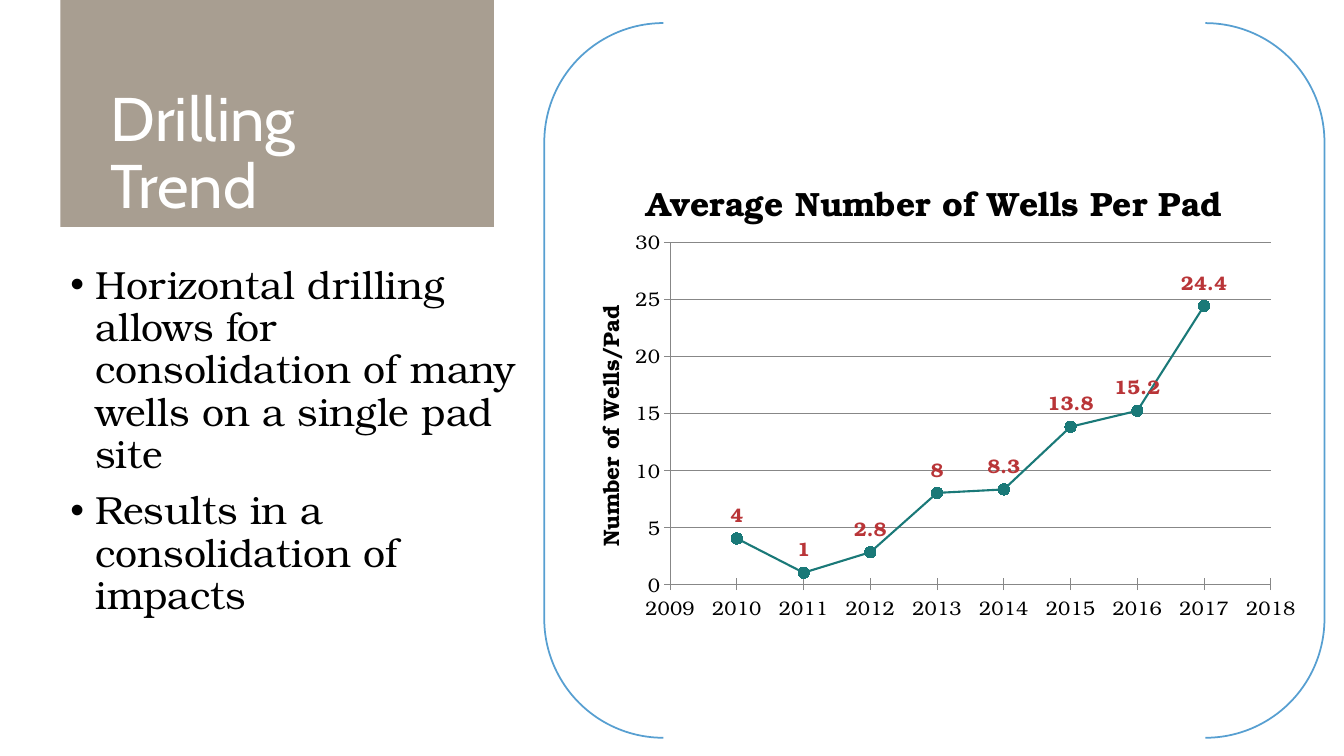
"""Build the Drilling Trend slide with its wells-per-pad chart."""
import lxml.etree
import pptx
import pptx.chart.data
import pptx.dml.color
import pptx.enum.chart
import pptx.enum.shapes
import pptx.enum.text
import pptx.oxml.ns
import pptx.util

Pt = pptx.util.Pt
qn = pptx.oxml.ns.qn

HEADING = "Drilling\vTrend"
BULLETS = [
    "Horizontal drilling allows for consolidation of many wells on a single pad site",
    "Results in a consolidation of impacts",
]
CHART_TITLE = "Average Number of Wells Per Pad"
AXIS_TITLE = "Number of Wells/Pad"
WELLS_PER_PAD = {2010: 4, 2011: 1, 2012: 2.8, 2013: 8,
                 2014: 8.3, 2015: 13.8, 2016: 15.2, 2017: 24.4}
HEADING_FONT, BODY_FONT = "Cabin", "TeX Gyre Bonum"
BLACK, WHITE, TAUPE, BLUE = "000000", "FFFFFF", "A89E91", "579FD1"
TEAL, RED, GREY = "1A7978", "B93538", "878787"


def color(hex_code):
    return pptx.dml.color.RGBColor.from_string(hex_code)


def format_font(font, size, hex_code=BLACK, face=BODY_FONT, bold=False):
    font.name, font.size, font.bold = face, Pt(size), bold
    font.color.rgb = color(hex_code)


def write(paragraph, text, spacing=None, before=0, bullet=None, **font_format):
    paragraph.text = text
    paragraph.line_spacing = spacing
    paragraph.space_before = Pt(before)
    if bullet:
        properties = paragraph._p.get_or_add_pPr()
        properties.set("marL", str(Pt(18)))
        properties.set("indent", str(-Pt(18)))
        lxml.etree.SubElement(properties, qn("a:buFont"), typeface="Arial")
        lxml.etree.SubElement(properties, qn("a:buChar"), char=bullet)
    for run in paragraph.runs:
        format_font(run.font, **font_format)


def place(element, **fractions):
    layout = element.find(qn("c:layout"))
    manual = lxml.etree.SubElement(layout, qn("c:manualLayout"))
    if "w" in fractions:
        lxml.etree.SubElement(manual, qn("c:layoutTarget"), val="inner")
    for side in "xy":
        lxml.etree.SubElement(manual, qn(f"c:{side}Mode"), val="edge")
    for side, fraction in fractions.items():
        lxml.etree.SubElement(manual, qn(f"c:{side}"), val=str(fraction))


def add_heading(slide):
    heading = slide.shapes.title
    heading.left, heading.top, heading.width, heading.height = Pt(43.2), Pt(0), Pt(309.6), Pt(162)
    heading.fill.solid()
    heading.fill.fore_color.rgb = color(TAUPE)
    frame = heading.text_frame
    frame.word_wrap = True
    frame.auto_size = pptx.enum.text.MSO_AUTO_SIZE.NONE
    frame.vertical_anchor = pptx.enum.text.MSO_ANCHOR.BOTTOM
    frame.margin_left = frame.margin_right = Pt(36)
    frame.margin_top = frame.margin_bottom = Pt(3.6)
    write(frame.paragraphs[0], HEADING, spacing=0.9, size=44, hex_code=WHITE, face=HEADING_FONT)
    frame.paragraphs[0].alignment = pptx.enum.text.PP_ALIGN.LEFT


def add_bullets(slide):
    frame = slide.shapes.add_textbox(Pt(43.2), Pt(171.4), Pt(336.2), Pt(288)).text_frame
    frame.word_wrap = True
    frame.vertical_anchor = pptx.enum.text.MSO_ANCHOR.MIDDLE
    for index, bullet_text in enumerate(BULLETS):
        paragraph = frame.add_paragraph() if index else frame.paragraphs[0]
        write(paragraph, bullet_text, spacing=0.9, before=10 if index else 0, bullet="•", size=28)


def add_brackets(slide):
    brackets = slide.shapes.add_shape(pptx.enum.shapes.MSO_SHAPE.DOUBLE_BRACKET,
                                      Pt(388.8), Pt(16.5), Pt(557.3), Pt(510.5))
    brackets.shadow.inherit = False
    brackets.fill.background()
    brackets.line.color.rgb = color(BLUE)
    brackets.line.width = Pt(1.25)


def format_axis(axis, low, high, step):
    axis.minimum_scale, axis.maximum_scale, axis.major_unit = low, high, step
    axis.major_tick_mark = pptx.enum.chart.XL_TICK_MARK.CROSS
    axis.minor_tick_mark = pptx.enum.chart.XL_TICK_MARK.NONE
    axis.format.line.color.rgb = color(GREY)
    axis.tick_labels.number_format = "General"
    axis.tick_labels.number_format_is_linked = False
    format_font(axis.tick_labels.font, size=14)


def add_trend_chart(slide):
    trend = pptx.chart.data.XyChartData()
    wells = trend.add_series("Series 1")
    for year, count in WELLS_PER_PAD.items():
        wells.add_data_point(year, count)
    chart = slide.shapes.add_chart(pptx.enum.chart.XL_CHART_TYPE.XY_SCATTER_LINES,
                                   Pt(398.2), Pt(95), Pt(536.4), Pt(354.2), trend).chart
    chart.has_legend = False
    format_font(chart.font, size=10)
    chart.has_title = True
    write(chart.chart_title.text_frame.paragraphs[0], CHART_TITLE, size=24, bold=True)
    years, counts = chart.category_axis, chart.value_axis
    format_axis(years, 2009, 2018, 1)
    format_axis(counts, 0, 30, 5)
    years.has_major_gridlines = False
    counts.has_major_gridlines = True
    counts.major_gridlines.format.line.color.rgb = color(GREY)
    counts.has_title = True
    write(counts.axis_title.text_frame.paragraphs[0], AXIS_TITLE, size=16, bold=True)
    plot_area = chart._chartSpace.chart.plotArea
    if plot_area.find(qn("c:layout")) is None:
        plot_area.insert(0, plot_area.makeelement(qn("c:layout")))
    place(plot_area, x=0.15, y=0.22, w=0.8, h=0.69)
    place(chart.chart_title._element, x=0.11, y=0.07)
    place(counts.axis_title._element, x=0.04, y=0.34)

    plot = chart.plots[0]
    plot.vary_by_categories = False
    series = plot.series[0]
    series.format.line.color.rgb = color(TEAL)
    series.format.line.width = Pt(1.5)
    series.marker.style = pptx.enum.chart.XL_MARKER_STYLE.CIRCLE
    series.marker.size = 8
    series.marker.format.fill.solid()
    series.marker.format.fill.fore_color.rgb = color(TEAL)
    series.marker.format.line.color.rgb = color(TEAL)
    for index in range(len(WELLS_PER_PAD)):
        label = series.points[index].data_label
        format_font(label.font, size=14, hex_code=RED, bold=True)
        label.position = pptx.enum.chart.XL_LABEL_POSITION.ABOVE


def main():
    deck = pptx.Presentation()
    deck.slide_width, deck.slide_height = Pt(960), Pt(540)
    slide = deck.slides.add_slide(deck.slide_layouts[5])
    add_brackets(slide)
    add_heading(slide)
    add_bullets(slide)
    add_trend_chart(slide)
    deck.save("out.pptx")


if __name__ == "__main__":
    main()
